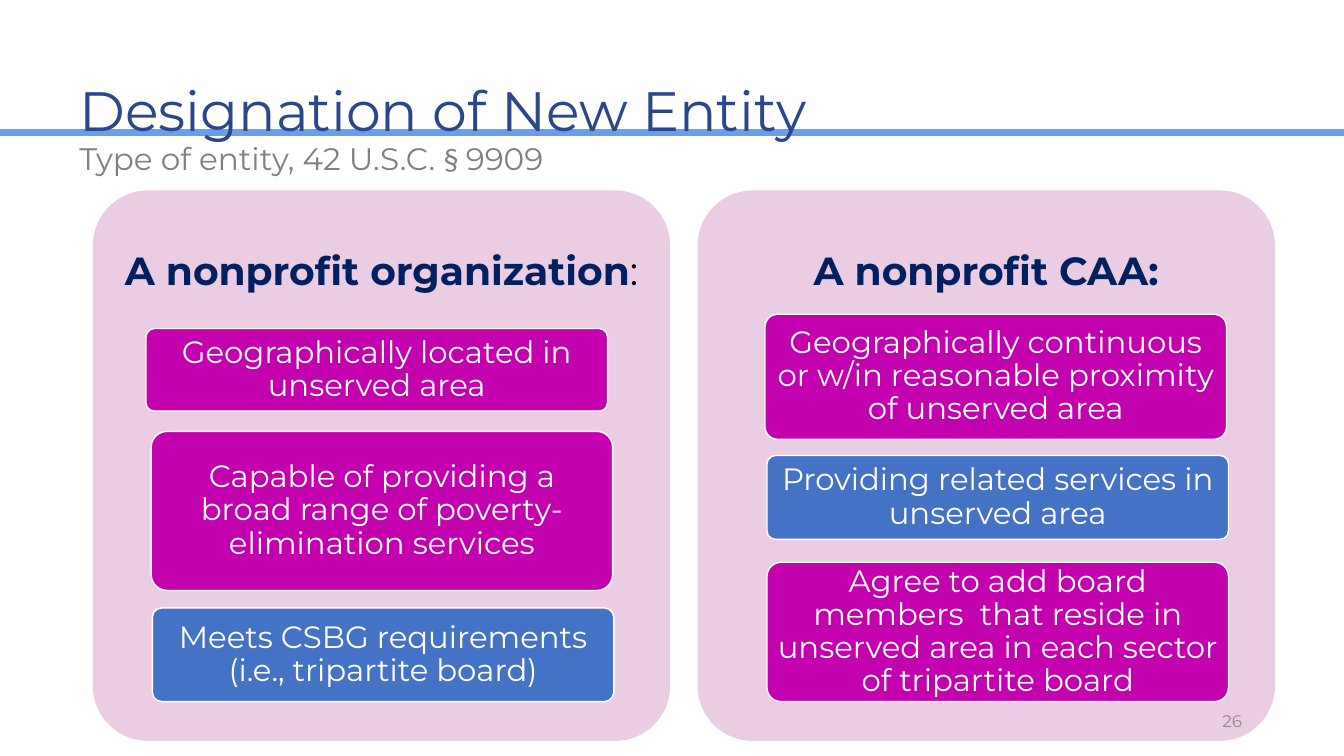
from pptx import Presentation
from pptx.dml.color import RGBColor
from pptx.enum.shapes import MSO_CONNECTOR as Link, MSO_SHAPE as Shape
from pptx.enum.text import MSO_ANCHOR as Anchor, PP_ALIGN as Align
from pptx.oxml.ns import qn
from pptx.util import Cm, Pt

WHITE = RGBColor(0xFF, 0xFF, 0xFF)
BLACK = RGBColor(0, 0, 0)
SKY = RGBColor(0x69, 0x9D, 0xEE)
PINK = RGBColor(0xEA, 0xCC, 0xE3)
PLUM = RGBColor(0xC4, 0x01, 0xAE)
BLUE = RGBColor(0x44, 0x72, 0xC4)
NAVY = RGBColor(0x00, 0x20, 0x60)
INK = RGBColor(0x2B, 0x47, 0x8B)
GRAY = RGBColor(0x80, 0x80, 0x80)
PALE = RGBColor(0x8C, 0x8C, 0x8C)
FONT = "Montserrat"

WIDE, TALL = 14.55, 13.87  # panel
TOP = 4.8
HEAD = 4.17  # heading height
BAR = 11.63  # box width

# panel left, heading runs (text, colour, bold), boxes (text, left, top, height, fill)
PANELS = [
    (2.34, [("A nonprofit organization", NAVY, True), (":", BLACK, False)], [
        ("Geographically located in unserved area", 3.68, 8.28, 2.08, PLUM),
        ("Capable of providing a broad range of poverty-elimination services",
         3.81, 10.87, 4.01, PLUM),
        ("Meets CSBG requirements (i.e., tripartite board)", 3.84, 15.32, 2.36, BLUE),
    ]),
    (17.58, [("A nonprofit CAA:", NAVY, True)], [
        ("Geographically continuous or w/in reasonable proximity of unserved area",
         19.28, 7.92, 3.15, PLUM),
        ("Providing related services in unserved area", 19.33, 11.48, 2.11, BLUE),
        ("Agree to add board members  that reside in unserved area in each sector"
         " of tripartite board", 19.33, 14.17, 3.51, PLUM),
    ]),
]

# runs (text, font, colour, bold), place, size, anchor, alignment, line spacing, space before
LABELS = [
    ([("Designation of New Entity", FONT, INK, False)],
     (1.75, 1.85, 29.21, 1.9), 39.6, Anchor.BOTTOM, Align.LEFT, 0.9),
    ([("Type of entity, 42 U.S.C. ", FONT, GRAY, False), ("§ ", "Calibri", GRAY, False),
      ("9909", FONT, GRAY, False)],
     (1.75, 3.56, 29.21, 1.04), 22.2, Anchor.TOP, Align.LEFT, 0.8),
    ([("26", FONT, PALE, False)],
     (23.93, 17.65, 7.62, 1.02), 12, Anchor.MIDDLE, Align.RIGHT, 1.0),
]


def write(shape, runs, size, anchor=Anchor.MIDDLE, align=Align.CENTER, gap=0.9,
          pad=(0.25, 0.13)):
    """Fill a shape with one paragraph; pad holds the side and top insets."""
    frame = shape.text_frame
    frame.word_wrap = True
    frame.vertical_anchor = anchor
    frame.margin_left = frame.margin_right = Cm(pad[0])
    frame.margin_top = frame.margin_bottom = Cm(pad[1])
    para = frame.paragraphs[0]
    para.alignment = align
    para.line_spacing = gap
    for text, face, color, bold in runs:
        run = para.add_run()
        run.text = text
        run.font.name = face
        run.font.size = Pt(size)
        run.font.bold = bold
        run.font.color.rgb = color


def block(left, top, width, height, fill):
    """Add a plain rounded box."""
    box = slide.shapes.add_shape(
        Shape.ROUNDED_RECTANGLE, Cm(left), Cm(top), Cm(width), Cm(height))
    box.adjustments[0] = 0.1
    box.shadow.inherit = False
    box.fill.solid()
    box.fill.fore_color.rgb = fill
    box.line.fill.background()
    return box


deck = Presentation()
deck.slide_width, deck.slide_height = Cm(33.87), Cm(19.05)
slide = deck.slides.add_slide(deck.slide_layouts[6])

rule = slide.shapes.add_connector(
    Link.STRAIGHT, 0, Cm(3.33), deck.slide_width, Cm(3.33))
rule.line.color.rgb = SKY
rule.line.width = Pt(5)
props = rule.element.spPr
props.append(props.makeelement(qn("a:effectLst"), {}))

for left, head, boxes in PANELS:
    block(left, TOP, WIDE, TALL, PINK)
    title = slide.shapes.add_textbox(Cm(left), Cm(TOP), Cm(WIDE), Cm(HEAD))
    write(title, [(text, FONT, color, bold) for text, color, bold in head], 28,
          pad=(0.3, 0.3))
    for text, x, y, height, fill in boxes:
        box = block(x, y, BAR, height, fill)
        box.line.color.rgb = WHITE
        box.line.width = Pt(1)
        write(box, [(text, FONT, WHITE, False)], 22, pad=(0.15, 0.13))

for runs, place, size, anchor, align, gap in LABELS:
    label = slide.shapes.add_textbox(*map(Cm, place))
    write(label, runs, size, anchor, align, gap)

deck.save("out.pptx")
